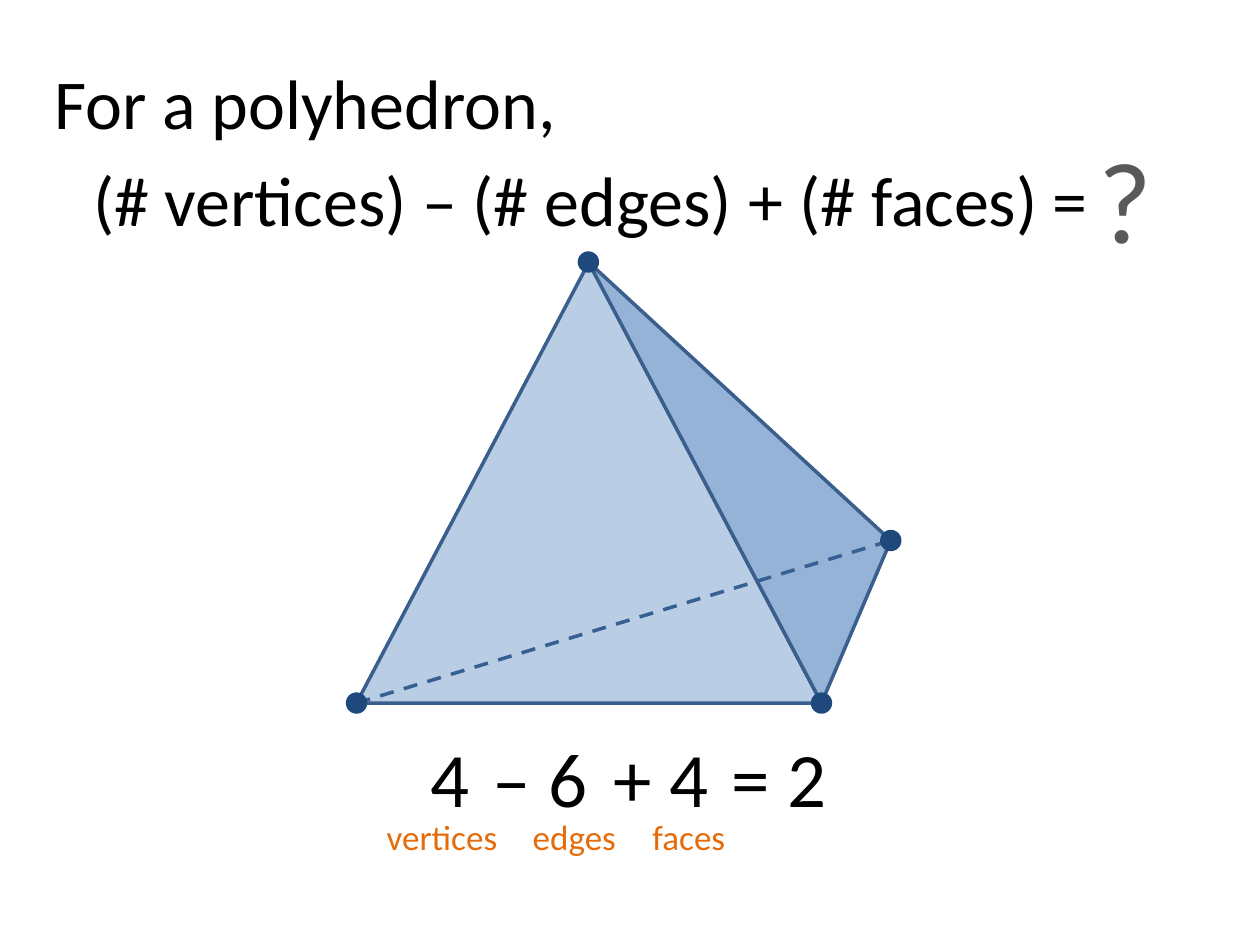
from lxml import etree
from pptx import Presentation
from pptx.dml.color import RGBColor
from pptx.enum import dml, shapes, text
from pptx.oxml.ns import qn
from pptx.util import Inches, Pt

BLACK = RGBColor(0x00, 0x00, 0x00)
GREY = RGBColor(0x59, 0x59, 0x59)
ORANGE = RGBColor(0xE4, 0x6C, 0x0A)
LIGHT = RGBColor(0xB9, 0xCD, 0xE5)
MID = RGBColor(0x95, 0xB3, 0xD7)
EDGE = RGBColor(0x3A, 0x5F, 0x8C)
HIDDEN = RGBColor(0x37, 0x60, 0x92)
NAVY = RGBColor(0x1F, 0x49, 0x7D)
LEFT, CENTER = text.PP_ALIGN.LEFT, text.PP_ALIGN.CENTER

deck = Presentation()
deck.slide_width, deck.slide_height = Inches(10), Inches(7.5)
slide = deck.slides.add_slide(deck.slide_layouts[5])
items = slide.shapes


def write(box, words, size, color, align=LEFT):
    frame = box.text_frame
    frame.text = words
    form = {"word_wrap": False, "vertical_anchor": text.MSO_ANCHOR.TOP,
            "auto_size": text.MSO_AUTO_SIZE.SHAPE_TO_FIT_TEXT}
    for key, value in form.items():
        setattr(frame, key, value)
    para = frame.paragraphs[0]
    para.alignment = align
    font = para.runs[0].font
    font.name, font.size, font.color.rgb = "Calibri", Pt(size), color


def paint(shape, fill, line=None):
    shape.shadow.inherit = False
    shape.fill.solid()
    shape.fill.fore_color.rgb = fill
    if line is None:
        shape.line.fill.background()
    else:
        shape.line.color.rgb = line
        shape.line.width = Pt(2)


# Title
title = items.title
place = {"left": 0.33, "top": 0.42, "width": 4.38, "height": 0.77}
for key, value in place.items():
    setattr(title, key, Inches(value))
write(title, "For a polyhedron,", 40, BLACK)

# Corners of the tetrahedron
apex, west, south, east = (4.67, 2.08), (2.83, 5.58), (6.52, 5.58), (7.07, 4.29)

# Front and side faces
front = items.add_shape(
    shapes.MSO_SHAPE.ISOSCELES_TRIANGLE, Inches(west[0]), Inches(apex[1]),
    Inches(south[0] - west[0]), Inches(south[1] - apex[1]))
paint(front, LIGHT, EDGE)
pen = items.build_freeform(Inches(apex[0]), Inches(apex[1]))
pen.add_line_segments([(Inches(x), Inches(y)) for x, y in (south, east)])
paint(pen.convert_to_shape(), MID, EDGE)

# Hidden edge
back = items.add_connector(shapes.MSO_CONNECTOR.STRAIGHT,
                           *[Inches(n) for n in west + east])
back.line.color.rgb = HIDDEN
back.line.width = Pt(2)
back.line.dash_style = dml.MSO_LINE.DASH
etree.SubElement(back._element.spPr, qn("a:effectLst"))

# Vertices
DOT = 0.17
for x, y in (west, south, east, apex):
    dot = items.add_shape(shapes.MSO_SHAPE.OVAL, Inches(x - DOT / 2),
                          Inches(y - DOT / 2), Inches(DOT), Inches(DOT))
    paint(dot, NAVY)

# Rows of text: top, height, size, colour, then (left, width, words, align)
rows = [
    # Formula
    (1.19, 0.77, 40, BLACK, [(0.64, 2.72, "(# vertices)", LEFT),
                             (3.24, 2.68, "– (# edges)", CENTER),
                             (5.83, 2.52, "+ (# faces)", CENTER),
                             (8.25, 0.48, "=", CENTER)]),
    (0.97, 1.21, 66, GREY, [(8.62, 0.63, "?", LEFT)]),
    # Count
    (5.75, 0.84, 44, BLACK, [(3.32, 0.51, "4", LEFT),
                             (3.81, 0.96, "– 6", LEFT),
                             (4.77, 0.96, "+ 4", LEFT),
                             (5.71, 0.96, "= 2", LEFT)]),
    # Labels
    (6.42, 0.44, 20, ORANGE, [(2.97, 1.09, "vertices", LEFT),
                              (4.13, 0.87, "edges", LEFT),
                              (5.08, 0.79, "faces", LEFT)]),
]
for top, height, size, color, parts in rows:
    for left, width, words, align in parts:
        box = items.add_textbox(Inches(left), Inches(top),
                                Inches(width), Inches(height))
        write(box, words, size, color, align)

deck.save("out.pptx")
